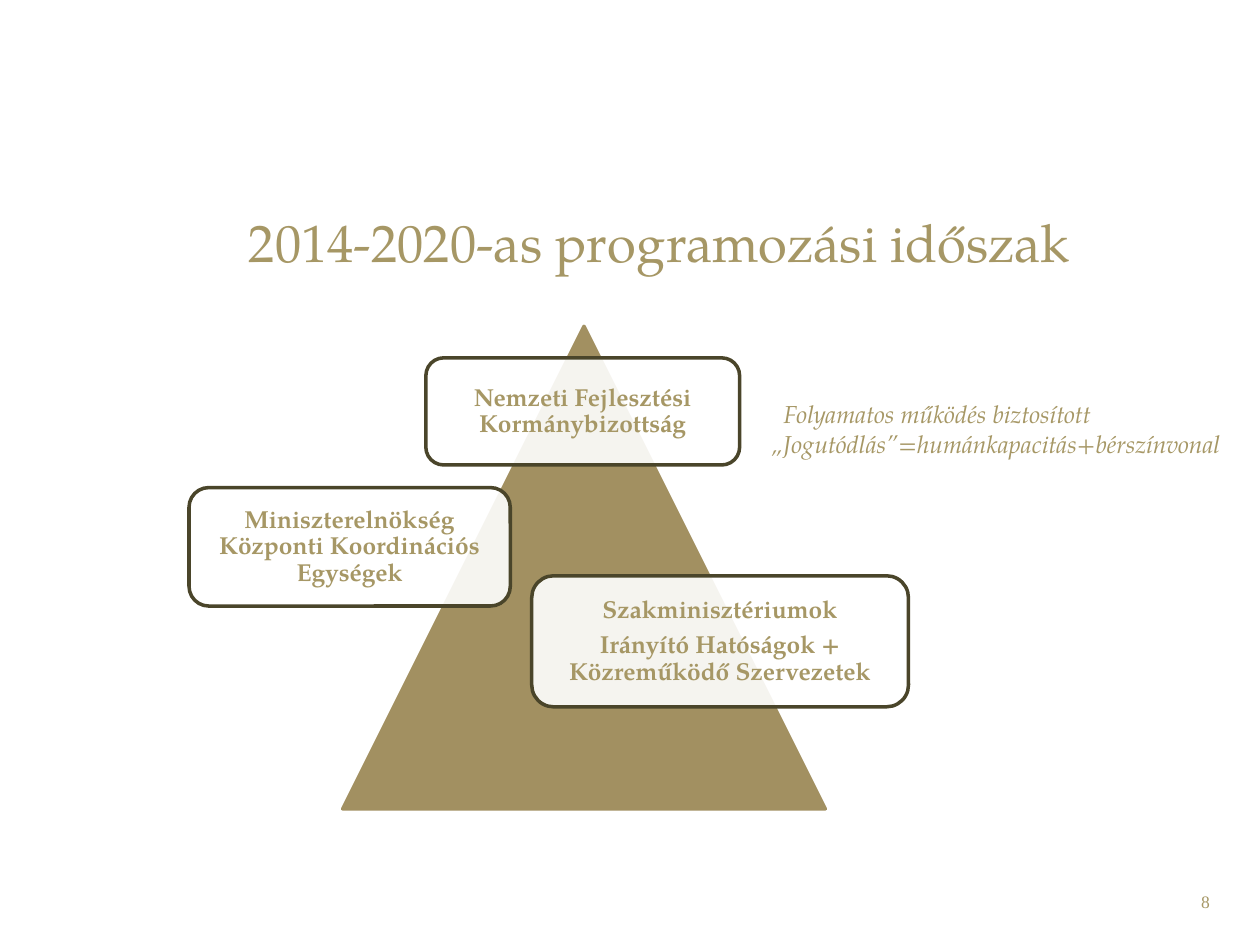
from dataclasses import dataclass

from lxml.etree import SubElement
from pptx import Presentation
from pptx.dml.color import RGBColor
from pptx.enum.shapes import MSO_SHAPE as Preset
from pptx.enum.text import MSO_ANCHOR as Anchor, PP_ALIGN as Align
from pptx.oxml.ns import qn
from pptx.util import Inches, Pt


@dataclass(frozen=True)
class Theme:
    text: RGBColor = RGBColor(0xA6, 0x97, 0x65)
    pyramid: RGBColor = RGBColor(0xA2, 0x90, 0x61)
    panel: RGBColor = RGBColor(0xFF, 0xFF, 0xFF)
    border: RGBColor = RGBColor(0x4A, 0x45, 0x2A)
    font: str = "TeX Gyre Pagella"
    number_font: str = "Times New Roman"
    title_size: int = 30
    body_size: int = 14
    number_size: int = 10
    line_width: int = 2
    panel_opacity: int = 90


def write(frame, text, theme, size=None, font=None, align=Align.CENTER,
          anchor=Anchor.TOP, bold=False, italic=False, inset=None,
          line_spacing=None, space_after=None, first_indent=0):
    frame.word_wrap = True
    frame.vertical_anchor = anchor
    if inset is not None:
        frame.margin_left = frame.margin_right = Inches(inset)
        frame.margin_top = frame.margin_bottom = Inches(inset)
    for index, line in enumerate(text.split("\n")):
        paragraph = frame.paragraphs[0] if index == 0 else frame.add_paragraph()
        paragraph.alignment = align
        paragraph.line_spacing = line_spacing
        paragraph.space_after = space_after
        if index == 0 and first_indent:
            paragraph._p.get_or_add_pPr().set("indent", str(Inches(first_indent)))
        run = paragraph.add_run()
        run.text = line
        run.font.name = font or theme.font
        run.font.size = Pt(size or theme.body_size)
        run.font.bold = bold
        run.font.italic = italic
        run.font.color.rgb = theme.text


class SlideBuilder:
    def __init__(self, slide, theme):
        self.slide = slide
        self.theme = theme

    def text(self, box, text, **style):
        shape = self.slide.shapes.add_textbox(*map(Inches, box))
        write(shape.text_frame, text, self.theme, **style)
        return shape

    def shape(self, preset, box, fill, line):
        shape = self.slide.shapes.add_shape(preset, *map(Inches, box))
        shape.shadow.inherit = False
        shape.fill.solid()
        shape.fill.fore_color.rgb = fill
        shape.line.color.rgb = line
        shape.line.width = Pt(self.theme.line_width)
        SubElement(shape.line._ln, qn("a:round"))
        return shape

    def pyramid(self, box):
        color = self.theme.pyramid
        return self.shape(Preset.ISOSCELES_TRIANGLE, box, color, color)

    def panel(self, box, text):
        theme = self.theme
        shape = self.shape(Preset.ROUNDED_RECTANGLE, box, theme.panel, theme.border)
        color = shape.fill._xPr.find(qn("a:solidFill"))[0]
        SubElement(color, qn("a:alpha"), val=str(theme.panel_opacity * 1000))
        write(shape.text_frame, text, theme, bold=True, anchor=Anchor.MIDDLE,
              inset=0.06, line_spacing=0.9, space_after=Pt(5))
        return shape


def main():
    presentation = Presentation()
    presentation.slide_width = Inches(10)
    presentation.slide_height = Inches(7.5)
    theme = Theme()
    builder = SlideBuilder(
        presentation.slides.add_slide(presentation.slide_layouts[6]), theme)

    builder.text((7.37, 7.02, 2.33, 0.4), "8", size=theme.number_size,
                 font=theme.number_font, align=Align.RIGHT)
    builder.text((1.14, 1.62, 8.19, 0.94), "2014-2020-as programozási időszak",
                 size=theme.title_size)
    builder.pyramid((2.72, 2.59, 3.83, 3.83))

    panels = [
        ((3.38, 2.84, 2.49, 0.85), "Nemzeti Fejlesztési Kormánybizottság"),
        ((1.5, 3.87, 2.55, 0.94),
         "Miniszterelnökség Központi Koordinációs Egységek"),
        ((4.22, 4.57, 2.99, 1.04),
         "Szakminisztériumok\nIrányító Hatóságok + Közreműködő Szervezetek"),
    ]
    for box, text in panels:
        builder.panel(box, text)

    builder.text((6.02, 3.12, 3.78, 0.57),
                 "Folyamatos működés biztosított\n"
                 "„Jogutódlás”=humánkapacitás+bérszínvonal",
                 align=Align.JUSTIFY, italic=True, first_indent=0.1)
    presentation.save("out.pptx")


if __name__ == "__main__":
    main()
